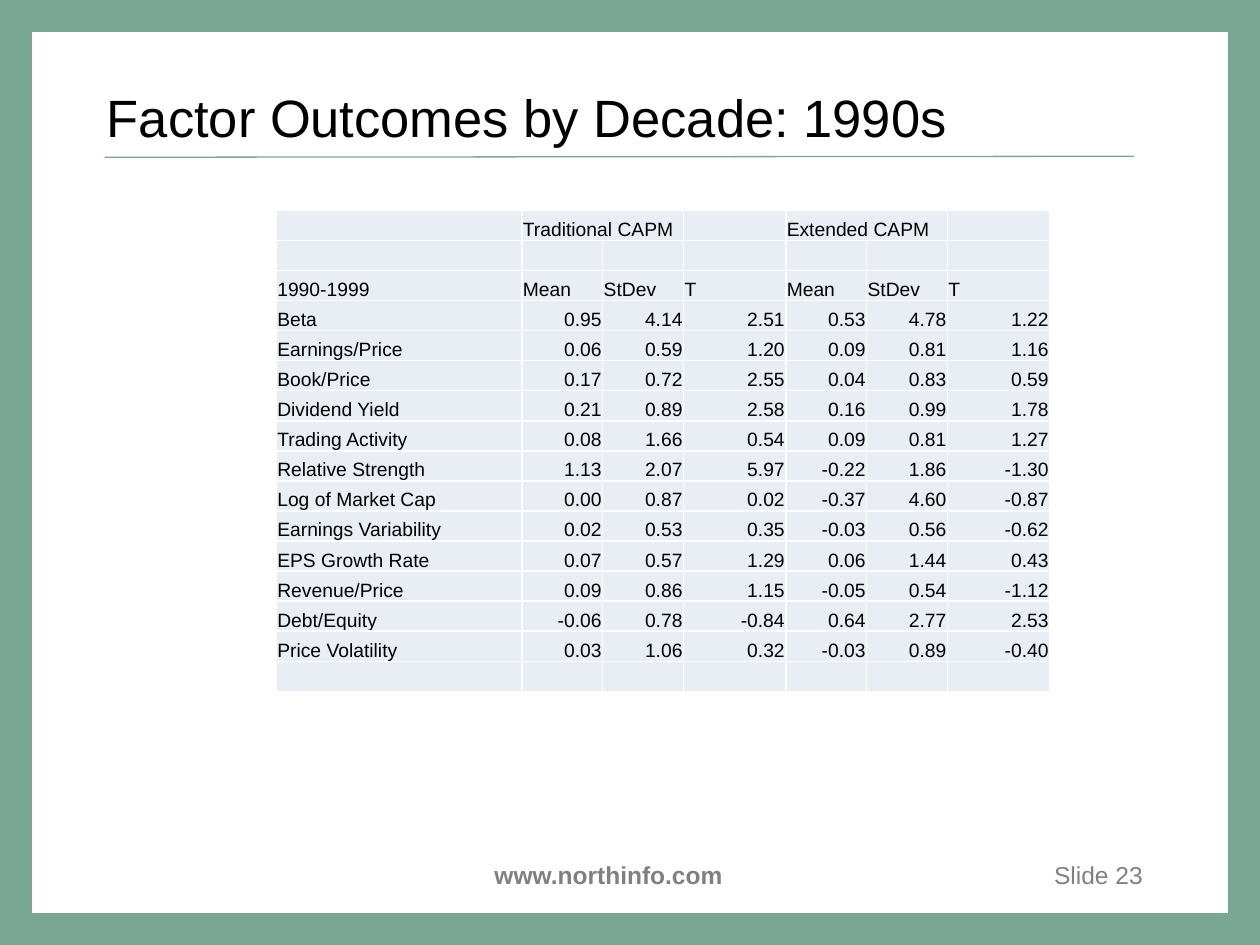
"""Build the slide with the factor outcomes of the 1990s as a table."""
import pptx
import pptx.dml.color
import pptx.enum.shapes
import pptx.enum.text
import pptx.oxml.ns
import pptx.util
from lxml import etree

Cm, Pt = pptx.util.Cm, pptx.util.Pt
ALIGN, ANCHOR = pptx.enum.text.PP_ALIGN, pptx.enum.text.MSO_ANCHOR
qn = pptx.oxml.ns.qn
COLORS = {"green": "7AA696", "grey": "808080", "black": "000000", "cell": "E9EDF4", "border": "FFFFFF"}
ROWS = [
    ["", "Traditional CAPM", "", "", "Extended CAPM", "", ""],
    [""] * 7,
    ["1990-1999", "Mean", "StDev", "T", "Mean", "StDev", "T"],
    ["Beta", "0.95", "4.14", "2.51", "0.53", "4.78", "1.22"],
    ["Earnings/Price", "0.06", "0.59", "1.20", "0.09", "0.81", "1.16"],
    ["Book/Price", "0.17", "0.72", "2.55", "0.04", "0.83", "0.59"],
    ["Dividend Yield", "0.21", "0.89", "2.58", "0.16", "0.99", "1.78"],
    ["Trading Activity", "0.08", "1.66", "0.54", "0.09", "0.81", "1.27"],
    ["Relative Strength", "1.13", "2.07", "5.97", "-0.22", "1.86", "-1.30"],
    ["Log of Market Cap", "0.00", "0.87", "0.02", "-0.37", "4.60", "-0.87"],
    ["Earnings Variability", "0.02", "0.53", "0.35", "-0.03", "0.56", "-0.62"],
    ["EPS Growth Rate", "0.07", "0.57", "1.29", "0.06", "1.44", "0.43"],
    ["Revenue/Price", "0.09", "0.86", "1.15", "-0.05", "0.54", "-1.12"],
    ["Debt/Equity", "-0.06", "0.78", "-0.84", "0.64", "2.77", "2.53"],
    ["Price Volatility", "0.03", "1.06", "0.32", "-0.03", "0.89", "-0.40"],
    [""] * 7,
]
WIDTHS = [4.95] + [1.63, 1.63, 2.06] * 2
HEADER_ROWS = 3


def rgb(name):
    return pptx.dml.color.RGBColor.from_string(COLORS[name])


def style(p, size, color, align, bold=False):
    p.alignment = align
    p.font.name = "Arial"
    p.font.size = Pt(size)
    p.font.bold = bold
    p.font.color.rgb = rgb(color)


prs = pptx.Presentation()
prs.slide_width, prs.slide_height = Cm(25.4), Cm(19.05)
s = prs.slides.add_slide(prs.slide_layouts[5])

frame = s.shapes.add_shape(pptx.enum.shapes.MSO_SHAPE.RECTANGLE, Cm(0.32), Cm(0.32), Cm(24.76), Cm(18.41))
frame.shadow.inherit = False
frame.fill.background()
frame.line.color.rgb = rgb("green")
frame.line.width = Pt(18)
etree.SubElement(frame.line._get_or_add_ln(), qn("a:miter"), lim="800000")

for text, left, width, align, bold in [
    ("www.northinfo.com", 9.02, 6.5, ALIGN.CENTER, True),
    ("Slide 23", 20.12, 3.17, ALIGN.RIGHT, False),
]:
    tf = s.shapes.add_textbox(Cm(left), Cm(17.22), Cm(width), Cm(0.84)).text_frame
    tf.word_wrap = True
    tf.text = text
    style(tf.paragraphs[0], 14, "grey", align, bold)

rule = s.shapes.add_connector(pptx.enum.shapes.MSO_CONNECTOR.STRAIGHT, Cm(2.11), Cm(3.17), Cm(22.86), Cm(3.15))
rule.line.color.rgb = rgb("green")
rule.line.width = Pt(0.75)
etree.SubElement(rule._element.spPr, qn("a:effectLst"))

title = s.shapes.title
title.left, title.top, title.width, title.height = Cm(1.9), Cm(1.47), Cm(22.86), Cm(1.75)
tf = title.text_frame
tf.text = "Factor Outcomes by Decade: 1990s"
tf.auto_size = pptx.enum.text.MSO_AUTO_SIZE.NONE
tf.vertical_anchor = ANCHOR.MIDDLE
style(tf.paragraphs[0], 30, "black", ALIGN.LEFT)

table = s.shapes.add_table(len(ROWS), len(WIDTHS), Cm(5.57), Cm(4.24), Cm(sum(WIDTHS)), Cm(9.7)).table
table.first_row = table.horz_banding = False
for column, width in zip(table.columns, WIDTHS):
    column.width = Cm(width)
for i, row in enumerate(ROWS):
    for j, text in enumerate(row):
        cell = table.cell(i, j)
        cell.text = text
        cell.margin_left = cell.margin_right = cell.margin_top = Cm(0.02)
        cell.margin_bottom = 0
        cell.vertical_anchor = ANCHOR.BOTTOM
        p = cell.text_frame.paragraphs[0]
        style(p, 11, "black", ALIGN.RIGHT if i >= HEADER_ROWS and j else ALIGN.LEFT)
        if not text:
            p._p.get_or_add_endParaRPr().set("sz", "1100")
        for side in ("lnL", "lnR", "lnT", "lnB"):
            ln = etree.SubElement(cell._tc.get_or_add_tcPr(), qn(f"a:{side}"), w=str(Pt(1)))
            fill = etree.SubElement(ln, qn("a:solidFill"))
            etree.SubElement(fill, qn("a:srgbClr"), val=COLORS["border"])
        cell.fill.solid()
        cell.fill.fore_color.rgb = rgb("cell")
for j in (1, 4):
    table.cell(0, j).merge(table.cell(0, j + 1))

prs.save("out.pptx")
